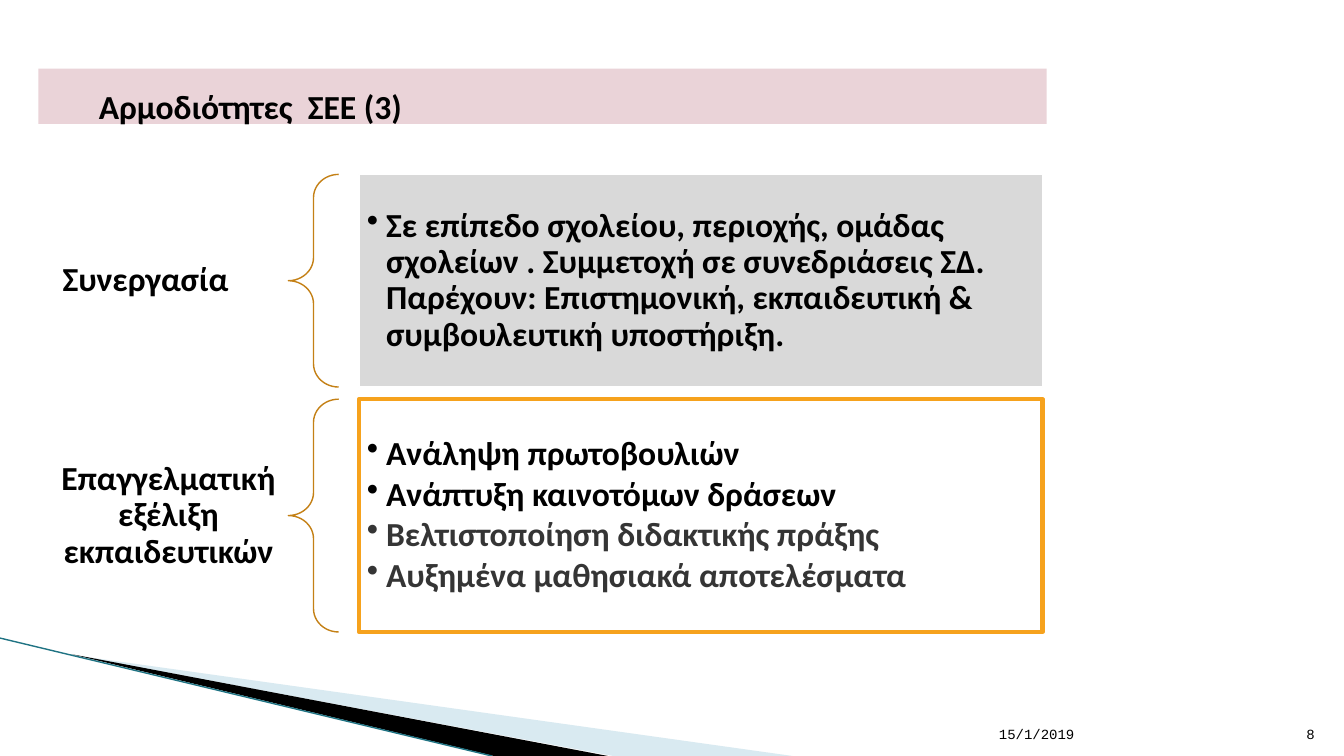
from dataclasses import dataclass

from lxml import etree
from pptx import Presentation, util as u
from pptx.dml.color import RGBColor
from pptx.enum import shapes, text
from pptx.oxml import ns

PX = 9144  # 100 px to the inch
COLORS = {
    "black": "000000", "white": "FFFFFF", "gray": "D9D9D9", "dark": "353535",
    "pink": "EAD3D8", "orange": "F6A21D", "brace": "C48015",
    "sky": "A0CBDC", "teal": "1F7383",
}


@dataclass
class Style:
    size: int = 24
    font: str = "Calibri"
    bold: bool = True
    align: text.PP_ALIGN = text.PP_ALIGN.LEFT
    after: int = 0
    spacing: float = 1.0
    bullet: bool = False


@dataclass
class Label:
    box: tuple[int, int, int, int]
    words: str
    align: text.PP_ALIGN


@dataclass
class Group:
    top: int
    height: int
    label: Label
    fill: str
    line: str
    line_width: int
    points: list[tuple[str, str]]


@dataclass
class Wedge:
    corners: list[tuple[int, int]]
    color: str
    alpha: int = 100


GROUPS = [
    Group(173, 211, Label((47, 246, 249, 65), "Συνεργασία", text.PP_ALIGN.LEFT),
          "gray", "white", 1,
          [("Σε επίπεδο σχολείου, περιοχής, ομάδας σχολείων . Συμμετοχή σε "
            "συνεδριάσεις ΣΔ. Παρέχουν: Επιστημονική, εκπαιδευτική & "
            "συμβουλευτική υποστήριξη.", "black")]),
    Group(396, 231, Label((37, 435, 260, 154), "Επαγγελματική εξέλιξη εκπαιδευτικών",
                          text.PP_ALIGN.CENTER),
          "white", "orange", 3,
          [("Ανάληψη πρωτοβουλιών", "black"),
           ("Ανάπτυξη καινοτόμων δράσεων", "black"),
           ("Βελτιστοποίηση διδακτικής πράξης", "dark"),
           ("Αυξημένα μαθησιακά αποτελέσματα", "dark")]),
]
WEDGES = [
    Wedge([(73, 650), (786, 750), (608, 750)], "sky", 40),
    Wedge([(71, 649), (603, 750), (490, 750)], "black"),
]


def rgb(name: str) -> RGBColor:
    return RGBColor.from_string(COLORS[name])


def px(*lengths: int) -> list[int]:
    return [u.Emu(n * PX) for n in lengths]


def paint(sp, fill: str | None, line: str | None = None, width: float = 1) -> None:
    sp.shadow.inherit = False
    if fill:
        sp.fill.solid()
        sp.fill.fore_color.rgb = rgb(fill)
    else:
        sp.fill.background()
    if line:
        sp.line.color.rgb = rgb(line)
        sp.line.width = u.Pt(width)
    else:
        sp.line.fill.background()


def write(sp, items: list[tuple[str, str]], style: Style,
          insets: tuple[int, int, int, int], anchor=text.MSO_ANCHOR.MIDDLE) -> None:
    tf = sp.text_frame
    tf.word_wrap = True
    tf.auto_size = text.MSO_AUTO_SIZE.NONE
    tf.vertical_anchor = anchor
    tf.margin_left, tf.margin_top, tf.margin_right, tf.margin_bottom = px(*insets)
    tf.text = "\n".join(words for words, _ in items)
    for p, (_, color) in zip(tf.paragraphs, items):
        p.alignment = style.align
        p.line_spacing = style.spacing
        p.space_after = u.Pt(style.after)
        if style.bullet:
            props = p._p.get_or_add_pPr()
            props.set("marL", str(19 * PX))
            props.set("indent", str(-19 * PX))
            etree.SubElement(props, ns.qn("a:buChar")).set("char", "•")
        for r in p.runs:
            r.font.size = u.Pt(style.size)
            r.font.name = style.font
            r.font.bold = style.bold
            r.font.color.rgb = rgb(color)


def draw_wedge(s, wedge: Wedge) -> None:
    builder = s.shapes.build_freeform(*wedge.corners[0], scale=PX)
    builder.add_line_segments(wedge.corners[1:])
    sp = builder.convert_to_shape()
    paint(sp, wedge.color)
    if wedge.alpha < 100:
        color = sp._element.spPr.find(".//" + ns.qn("a:srgbClr"))
        etree.SubElement(color, ns.qn("a:alpha")).set("val", str(wedge.alpha * 1000))


def draw_group(s, group: Group) -> None:
    label = s.shapes.add_textbox(*px(*group.label.box))
    write(label, [(group.label.words, "black")],
          Style(align=group.label.align, spacing=0.9), (15, 5, 15, 5))

    brace = s.shapes.add_shape(shapes.MSO_SHAPE.LEFT_BRACE,
                               *px(286, group.top, 50, group.height))
    brace.adjustments[0] = 0.46
    paint(brace, None, "brace")

    panel = s.shapes.add_shape(shapes.MSO_SHAPE.RECTANGLE,
                               *px(356, group.top, 678, group.height))
    paint(panel, group.fill, group.line, group.line_width)
    write(panel, group.points, Style(after=3, spacing=0.9, bullet=True), (8, 8, 8, 8))


def main() -> None:
    prs = Presentation()
    prs.slide_width, prs.slide_height = px(1333, 750)
    s = prs.slides.add_slide(prs.slide_layouts[5])

    # Corner decoration
    for wedge in WEDGES:
        draw_wedge(s, wedge)
    edge = s.shapes.add_connector(shapes.MSO_CONNECTOR.STRAIGHT, *px(0, 633, 488, 750))
    edge.line.color.rgb = rgb("teal")
    edge.line.width = u.Pt(1)
    etree.SubElement(edge._element.spPr, ns.qn("a:effectLst"))

    # Title band
    title = s.shapes.title
    title.left, title.top, title.width, title.height = px(38, 68, 1000, 55)
    title.fill.solid()
    title.fill.fore_color.rgb = rgb("pink")
    write(title, [("Αρμοδιότητες  ΣΕΕ (3)", "black")], Style(), (60, 25, 10, 5))

    # Labels, braces and panels
    for group in GROUPS:
        draw_group(s, group)

    # Date and slide number
    for left, width, words, align in (
            (981, 280, "15/1/2019", text.PP_ALIGN.LEFT),
            (1261, 53, "8", text.PP_ALIGN.RIGHT)):
        sp = s.shapes.add_textbox(*px(left, 701, width, 40))
        write(sp, [(words, "black")], Style(10, "Courier New", False, align),
              (10, 5, 10, 5), text.MSO_ANCHOR.BOTTOM)

    prs.save("out.pptx")


if __name__ == "__main__":
    main()
